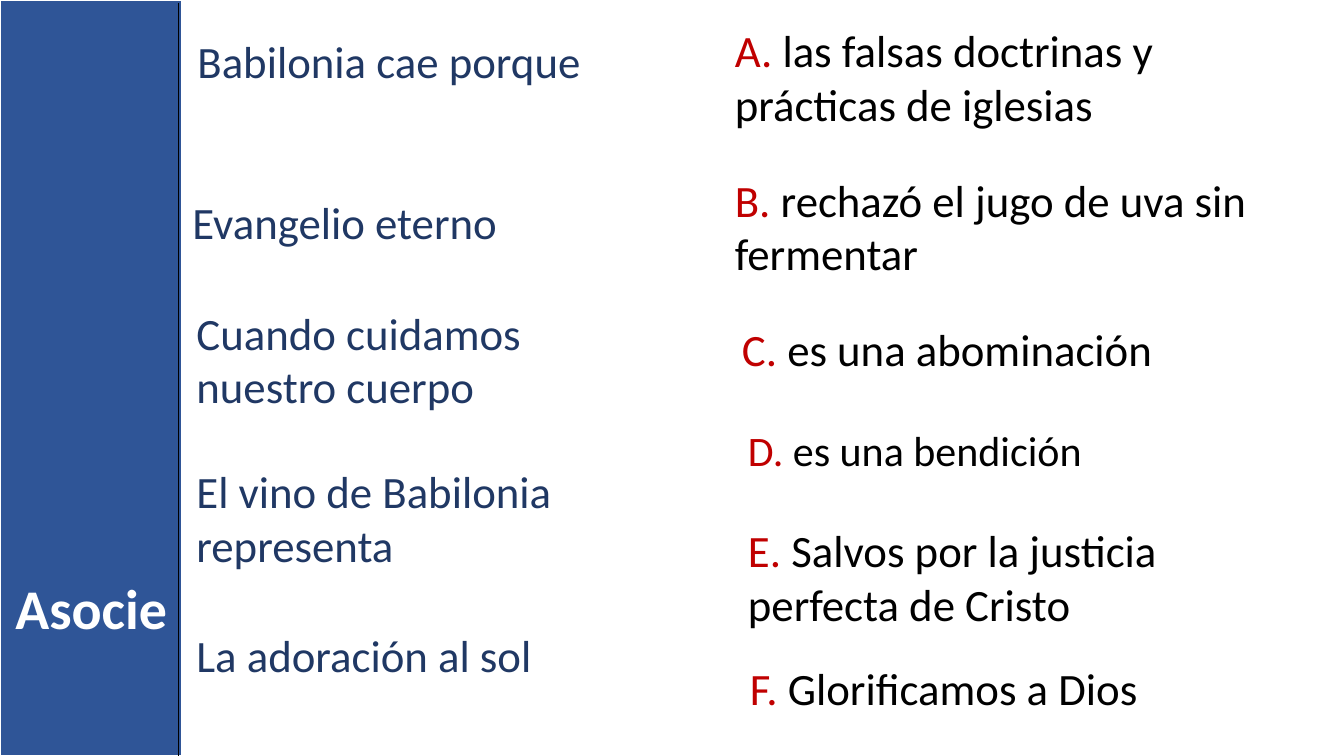
from pptx import Presentation
from pptx.dml.color import RGBColor
from pptx.enum.shapes import MSO_CONNECTOR as Link, MSO_SHAPE as Shape
from pptx.enum.text import MSO_ANCHOR as Anchor, MSO_AUTO_SIZE as Fit, PP_ALIGN as Align
from pptx.oxml.ns import qn
from pptx.util import Inches, Pt

WHITE, BLACK = "FFFFFF", "000000"
BLUE, NAVY, RED = "2F5597", "203864", "C00000"
ONE, TWO = 0.64, 1.18  # heights of one and two lines of text

# left, top, width, height, text
PROMPTS = [
    (1.86, 0.29, 4.89, ONE, "Babilonia cae porque"),
    (1.81, 1.88, 5.16, ONE, "Evangelio eterno"),
    (1.85, 2.98, 4.46, TWO, "Cuando cuidamos nuestro cuerpo"),
    (1.85, 4.55, 4.94, TWO, "El vino de Babilonia representa"),
    (1.85, 6.18, 4.46, ONE, "La adoración al sol"),
]
# left, top, width, height, size, text
ANSWERS = [
    (7.19, 0.18, 5.96, TWO, 32, "las falsas doctrinas y prácticas de iglesias"),
    (7.19, 1.66, 5.96, TWO, 32, "rechazó el jugo de uva sin fermentar"),
    (7.26, 3.14, 5.6, ONE, 32, "es una abominación"),
    (7.32, 4.16, 5.23, 0.61, 30, "es una bendición"),
    (7.32, 5.14, 5.53, TWO, 32, "Salvos por la justicia perfecta de Cristo"),
    (7.34, 6.51, 5.67, ONE, 32, "Glorificamos a Dios"),
]


def paint(fmt, color):
    """Give a fill a solid colour."""
    fmt.solid()
    fmt.fore_color.rgb = RGBColor.from_string(color)


def style(run, size, color, bold=False):
    run.font.name = "Calibri"
    run.font.size = Pt(size)
    run.font.bold = bold
    paint(run.font.fill, color)


def add_text(slide, box, parts, size):
    """Add a text box whose one line is made of (text, colour) parts."""
    frame = slide.shapes.add_textbox(*map(Inches, box)).text_frame
    frame.word_wrap = True
    frame.auto_size = Fit.SHAPE_TO_FIT_TEXT
    for text, color in parts:
        run = frame.paragraphs[0].add_run()
        run.text = text
        style(run, size, color)


def add_band(slide, left, top, width, height):
    """Add the side band with the title and its edge line."""
    band = slide.shapes.add_shape(
        Shape.RECTANGLE, *map(Inches, (left, top, width, height)))
    band.shadow.inherit = False
    paint(band.fill, BLUE)
    paint(band.line.fill, WHITE)
    band.line.width = Pt(1.5)

    title = slide.shapes.title
    title._element.addprevious(band._element)  # band goes behind the title
    title.left, title.top = Inches(left), Inches(top + 5.64)
    title.width, title.height = Inches(width), Inches(0.77)
    frame = title.text_frame
    frame.text = "Asocie"
    frame.word_wrap = True
    frame.auto_size = Fit.SHAPE_TO_FIT_TEXT
    frame.vertical_anchor = Anchor.TOP
    line = frame.paragraphs[0]
    line.alignment = Align.CENTER
    style(line.runs[0], 40, WHITE, bold=True)

    x = left + width - 0.04
    edge = slide.shapes.add_connector(
        Link.STRAIGHT, *map(Inches, (x, top + 0.03, x, top + height)))
    paint(edge.line.fill, BLACK)
    edge.line.width = Pt(1)
    props = edge._element.spPr
    props.append(props.makeelement(qn("a:effectLst"), {}))


def add_prompts(slide):
    for *box, text in PROMPTS:
        add_text(slide, box, [(text, NAVY)], 32)


def add_answers(slide):
    for mark, (*box, size, text) in zip("ABCDEF", ANSWERS):
        add_text(slide, box, [(f"{mark}. ", RED), (text, BLACK)], size)


def main():
    deck = Presentation()
    deck.slide_width, deck.slide_height = Inches(13.33), Inches(7.5)
    slide = deck.slides.add_slide(deck.slide_layouts[5])
    paint(slide.background.fill, WHITE)
    add_band(slide, 0, 0, 1.81, 7.5)
    add_prompts(slide)
    add_answers(slide)
    deck.save("out.pptx")


if __name__ == "__main__":
    main()
